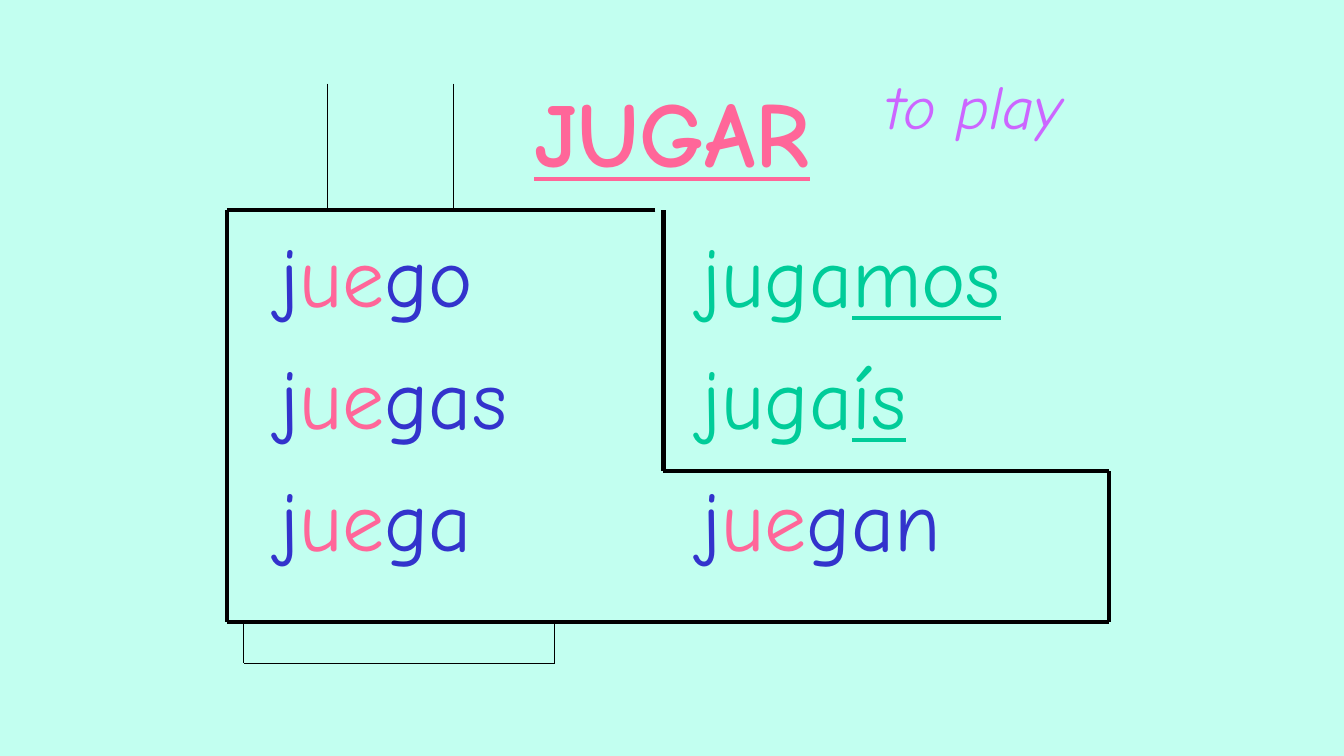
from lxml import etree
from pptx import Presentation
from pptx.dml.color import RGBColor
from pptx.enum.shapes import MSO_CONNECTOR
from pptx.enum.text import MSO_ANCHOR, PP_ALIGN
from pptx.oxml.ns import qn
from pptx.util import Inches, Pt

COLORS = {
    "mint": "C2FFF0",
    "pink": "FF6699",
    "blue": "3333CC",
    "green": "00CC99",
    "violet": "CC66FF",
    "black": "000000",
}
FONT = "Comic Neue"


def add_span(para, text, size, color, bold=False, italic=False, underline=False):
    span = para.add_run()
    span.text = text
    font = span.font
    font.name = FONT
    font.size = Pt(size)
    font.bold = bold
    font.italic = italic
    font.underline = underline
    font.color.rgb = RGBColor.from_string(COLORS[color])


def add_line(page, start, end, weight):
    ends = [Inches(value) for value in (*start, *end)]
    line = page.shapes.add_connector(MSO_CONNECTOR.STRAIGHT, *ends)
    line.line.color.rgb = RGBColor.from_string(COLORS["black"])
    line.line.width = Pt(weight)
    etree.SubElement(line._element.spPr, qn("a:effectLst"))


deck = Presentation()
deck.slide_width = Inches(13.33)
deck.slide_height = Inches(7.5)
page = deck.slides.add_slide(deck.slide_layouts[5])
page.background.fill.solid()
page.background.fill.fore_color.rgb = RGBColor.from_string(COLORS["mint"])

title = page.shapes.title
title.left, title.top = Inches(1), Inches(0.67)
title.width, title.height = Inches(11.33), Inches(1.25)
title.text_frame.vertical_anchor = MSO_ANCHOR.MIDDLE
title_para = title.text_frame.paragraphs[0]
title_para.alignment = PP_ALIGN.CENTER
add_span(title_para, "JUGAR", 66, "pink", bold=True, underline=True)

singular = [
    [("j", "blue", False), ("ue", "pink", False), (ending, "blue", False)]
    for ending in ("go", "gas", "ga")
]
plural = [
    [("juga", "green", False), ("mos", "green", True)],
    [("juga", "green", False), ("ís", "green", True)],
    [("j", "blue", False), ("ue", "pink", False), ("gan", "blue", False)],
]
columns = [(1, 5.56, 1.77, singular), (6.58, 5.08, 0.38, plural)]
for left, width, indent, verbs in columns:
    box = page.shapes.add_textbox(Inches(left), Inches(2.17), Inches(width), Inches(4.5))
    frame = box.text_frame
    frame.word_wrap = True
    frame.margin_left = Inches(indent)
    for row, verb in enumerate(verbs):
        para = frame.add_paragraph() if row else frame.paragraphs[0]
        para.space_before = Pt(15 if row else 0)
        for text, color, underline in verb:
            add_span(para, text, 60, color, underline=underline)

boot = [(6.5, 2.08), (2.25, 2.08), (2.25, 6.17), (11, 6.17), (11, 4.67), (6.58, 4.67), (6.58, 2.08)]
heel = [(2.42, 6.17), (2.42, 6.58), (5.5, 6.58), (5.5, 6.17)]
straps = [[(x, 0.83), (x, 2.08)] for x in (3.25, 4.5)]
for outline, weight in [(boot, 3), (heel, 0.75), *((strap, 0.75) for strap in straps)]:
    for start, end in zip(outline, outline[1:]):
        add_line(page, start, end, weight)

meaning = page.shapes.add_textbox(Inches(8.68), Inches(0.62), Inches(2.14), Inches(1.31))
meaning.text_frame.word_wrap = False
add_span(meaning.text_frame.paragraphs[0], "to play", 44, "violet", italic=True)

deck.save("out.pptx")
